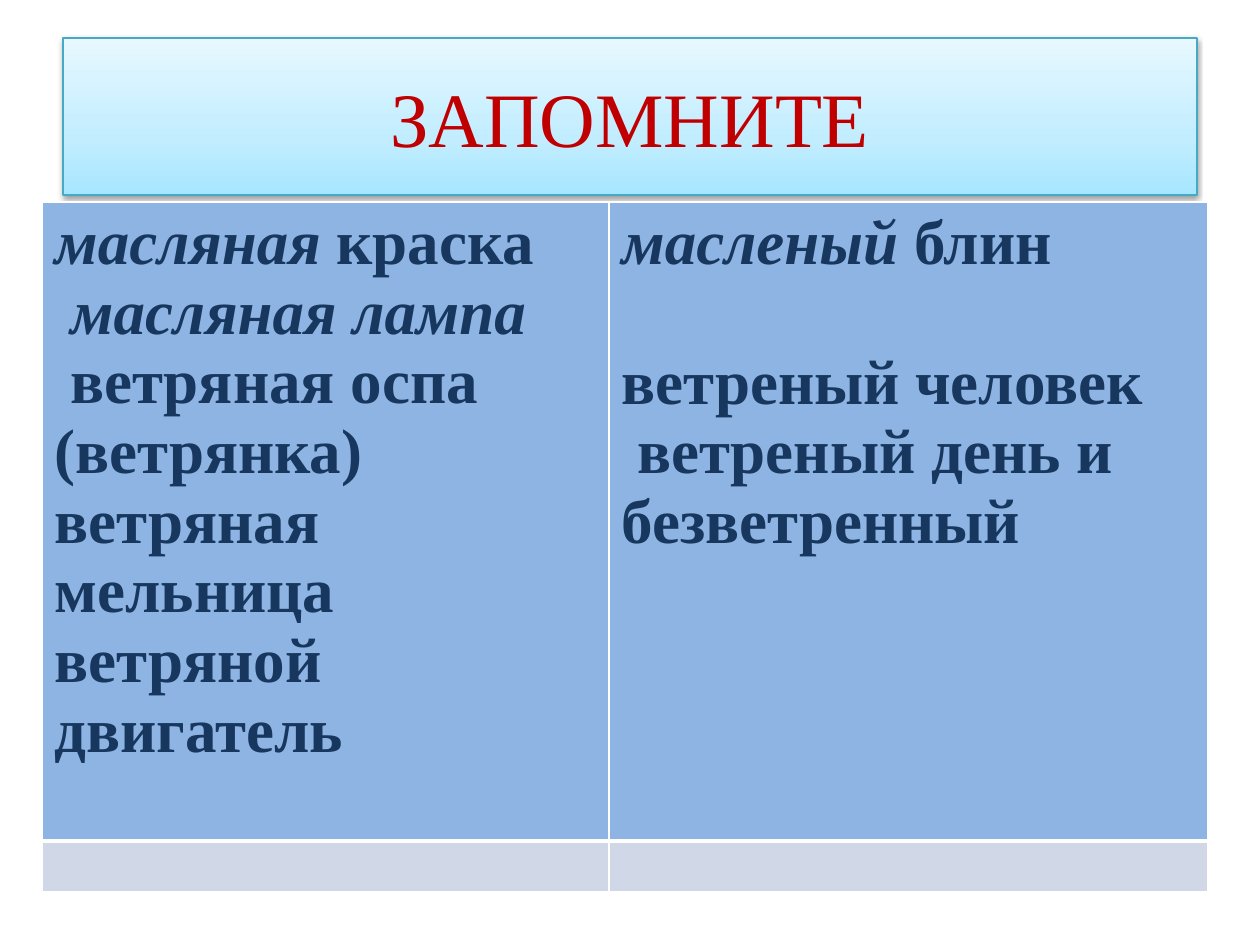
from lxml import etree
from pptx import Presentation
from pptx.dml.color import RGBColor
from pptx.enum.shapes import MSO_SHAPE
from pptx.enum.text import MSO_ANCHOR, PP_ALIGN
from pptx.oxml import parse_xml
from pptx.oxml.ns import qn
from pptx.util import Pt

RECTANGLE = MSO_SHAPE.RECTANGLE
MIDDLE = MSO_ANCHOR.MIDDLE
CENTER = PP_ALIGN.CENTER

RED = RGBColor(0xC0, 0x00, 0x00)
NAVY = RGBColor(0x17, 0x37, 0x5E)
TEAL = RGBColor(0x46, 0xAA, 0xC5)
WORDS_FILL = RGBColor(0x8E, 0xB4, 0xE3)
EMPTY_FILL = RGBColor(0xD0, 0xD8, 0xE8)
WHITE = RGBColor(0xFF, 0xFF, 0xFF)
BLACK = RGBColor(0x00, 0x00, 0x00)
GRADIENT = [
    (0, RGBColor(0xA7, 0xE6, 0xFF)),
    (35, RGBColor(0xC1, 0xED, 0xFF)),
    (100, RGBColor(0xE7, 0xF8, 0xFF)),
]

FONT = "Times New Roman"
TITLE = "ЗАПОМНИТЕ"
ITALIC, UPRIGHT = True, False
LINE_GAP = 40
WORDS = [
    [
        (0, [("масляная ", ITALIC), ("краска", UPRIGHT)]),
        (0, [(" ", UPRIGHT), ("масляная лампа", ITALIC)]),
        (0, [(" ветряная оспа (ветрянка)", UPRIGHT)]),
        (0, [("ветряная мельница", UPRIGHT)]),
        (0, [("ветряной двигатель", UPRIGHT)]),
    ],
    [
        (0, [("масленый", ITALIC), (" блин", UPRIGHT)]),
        (LINE_GAP, [("ветреный человек", UPRIGHT)]),
        (0, [(" ветреный день и безветренный", UPRIGHT)]),
    ],
]

PX = 914400 / 126
TITLE_BOX = (63, 38, 1134, 157)
TABLE_ORIGIN = (42, 202)
COLUMNS = (567, 599)
ROWS = (639, 51)
ROW_FILLS = (WORDS_FILL, EMPTY_FILL)
ROW_BORDERS = (
    {"lnL": 1, "lnR": 1, "lnT": 1, "lnB": 3},
    {"lnL": 1, "lnR": 1, "lnT": 3, "lnB": 1},
)
DRAWING = 'xmlns:a="http://schemas.openxmlformats.org/drawingml/2006/main"'


def px(value):
    return round(value * PX)


def add_run(paragraph, text, size, color, bold=False, italic=False):
    run = paragraph.add_run()
    run.text = text
    font = run.font
    font.name, font.size = FONT, Pt(size)
    font.bold, font.italic = bold, italic
    font.color.rgb = color


def set_gradient(shape):
    shape.fill.gradient()
    shape.fill.gradient_angle = 90
    stops = shape.fill._fill._gradFill.find(qn("a:gsLst"))
    for stop in list(stops):
        stops.remove(stop)
    for position, color in GRADIENT:
        stop = etree.SubElement(stops, qn("a:gs"), pos=str(position * 1000))
        etree.SubElement(stop, qn("a:srgbClr"), val=str(color))


def set_shadow(shape):
    shape.shadow.inherit = False
    effects = shape._element.spPr.find(qn("a:effectLst"))
    effects.append(parse_xml(
        f'<a:outerShdw {DRAWING} blurRad="{Pt(3.1)}" dist="{Pt(1.6)}" dir="5400000" rotWithShape="0">'
        f'<a:srgbClr val="{BLACK}"><a:alpha val="38000"/></a:srgbClr></a:outerShdw>'
    ))


def set_borders(cell, widths):
    properties = cell._tc.get_or_add_tcPr()
    for index, (side, width) in enumerate(widths.items()):
        properties.insert(index, parse_xml(
            f'<a:{side} {DRAWING} w="{Pt(width)}"><a:solidFill>'
            f'<a:srgbClr val="{WHITE}"/></a:solidFill></a:{side}>'
        ))


def add_title(slide):
    shape = slide.shapes.add_shape(RECTANGLE, *map(px, TITLE_BOX))
    set_gradient(shape)
    shape.line.color.rgb = TEAL
    shape.line.width = Pt(0.75)
    set_shadow(shape)
    shape.text_frame.word_wrap = True
    shape.text_frame.vertical_anchor = MIDDLE
    paragraph = shape.text_frame.paragraphs[0]
    paragraph.alignment = CENTER
    add_run(paragraph, TITLE, 44, RED)


def fill_words(cell, lines):
    frame = cell.text_frame
    for index, (gap, runs) in enumerate(lines):
        paragraph = frame.add_paragraph() if index else frame.paragraphs[0]
        paragraph.space_before = Pt(gap)
        for text, italic in runs:
            add_run(paragraph, text, 36, NAVY, bold=True, italic=italic)


def add_words_table(slide):
    size = (sum(COLUMNS), sum(ROWS))
    table = slide.shapes.add_table(
        len(ROWS), len(COLUMNS), *map(px, TABLE_ORIGIN + size)
    ).table
    for column, width in zip(table.columns, COLUMNS):
        column.width = px(width)
    for row, height, fill, borders in zip(table.rows, ROWS, ROW_FILLS, ROW_BORDERS):
        row.height = px(height)
        for cell in row.cells:
            cell.fill.solid()
            cell.fill.fore_color.rgb = fill
            set_borders(cell, borders)
    for cell, lines in zip(table.rows[0].cells, WORDS):
        fill_words(cell, lines)


def main():
    presentation = Presentation()
    presentation.slide_width, presentation.slide_height = px(1260), px(945)
    slide = presentation.slides.add_slide(presentation.slide_layouts[6])
    add_title(slide)
    add_words_table(slide)
    presentation.save("out.pptx")


if __name__ == "__main__":
    main()
